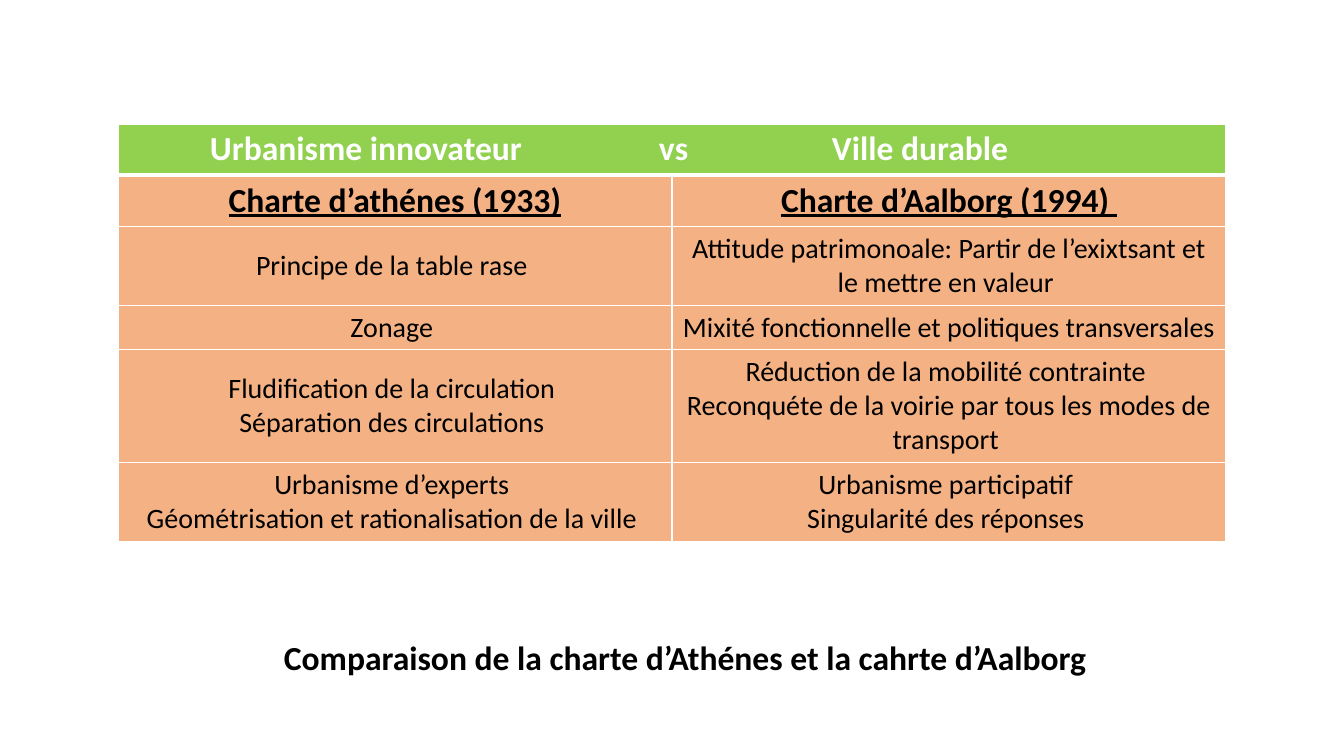
import dataclasses

import lxml.etree
import pptx
import pptx.dml.color
import pptx.enum.text
import pptx.oxml.ns
import pptx.util

SCALE = 914400 / 100.8
FONT = "Calibri"
COLOR = {"white": "FFFFFF", "black": "000000", "green": "92D050", "peach": "F4B183"}
ALIGN = pptx.enum.text.PP_ALIGN
ANCHOR = pptx.enum.text.MSO_ANCHOR


@dataclasses.dataclass
class Style:
    size: int
    color: str = "black"
    bold: bool = False
    line: bool = False
    align: ALIGN = ALIGN.CENTER
    anchor: ANCHOR = ANCHOR.MIDDLE


@dataclasses.dataclass
class Row:
    height: int
    texts: tuple[str, ...]
    style: Style
    fill: str = "peach"
    rule: int = 1


HEAD = Style(24, "white", bold=True, align=ALIGN.LEFT, anchor=ANCHOR.TOP)
CHARTER = Style(24, bold=True, line=True, anchor=ANCHOR.TOP)
BODY = Style(20)
CAPTION = Style(24, bold=True, align=ALIGN.LEFT, anchor=ANCHOR.TOP)

ROWS = [
    Row(50, ("Urbanisme innovateur\tvs\tVille durable",), HEAD, "green", 3),
    Row(50, ("Charte d’athénes (1933)", "Charte d’Aalborg (1994) "), CHARTER),
    Row(79, ("Principe de la table rase ",
             "Attitude patrimonoale: Partir de l’exixtsant et le mettre en valeur "), BODY),
    Row(44, ("Zonage ", "Mixité fonctionnelle et politiques transversales "), BODY),
    Row(113, ("Fludification de la circulation \nSéparation des circulations ",
              "Réduction de la mobilité contrainte \n"
              "Reconquéte de la voirie par tous les modes de transport "), BODY),
    Row(79, ("Urbanisme d’experts \nGéométrisation et rationalisation de la ville ",
             "Urbanisme participatif \nSingularité des réponses "), BODY),
]
LEFT, TOP, COL = 118, 124, 554
INDENT, STOPS = 92, (449, 622)


def px(n: int) -> pptx.util.Emu:
    return pptx.util.Emu(round(n * SCALE))


def rgb(name: str) -> pptx.dml.color.RGBColor:
    return pptx.dml.color.RGBColor.from_string(COLOR[name])


def write(frame, text: str, style: Style) -> None:
    frame.text = text
    frame.word_wrap = True
    for para in frame.paragraphs:
        para.alignment = style.align
        for run in para.runs:
            font = run.font
            font.name, font.size = FONT, pptx.util.Pt(style.size)
            font.bold, font.underline = style.bold, style.line
            font.color.rgb = rgb(style.color)


def add(parent, tag: str, **attrs: str):
    return lxml.etree.SubElement(parent, pptx.oxml.ns.qn(tag), **attrs)


def edge(cell, top: int, base: int) -> None:
    """Give the cell white borders, with top and base widths in points."""
    props = cell._tc.get_or_add_tcPr()
    for side, width in (("L", 1), ("R", 1), ("T", top), ("B", base)):
        line = add(props, f"a:ln{side}", w=str(pptx.util.Pt(width)))
        add(add(line, "a:solidFill"), "a:srgbClr", val=COLOR["white"])


def tabs(para) -> None:
    stops = add(para._p.get_or_add_pPr(), "a:tabLst")
    for stop in STOPS:
        add(stops, "a:tab", pos=str(px(stop)), algn="l")


def grid(slide) -> None:
    high = sum(row.height for row in ROWS)
    table = slide.shapes.add_table(
        len(ROWS), 2, px(LEFT), px(TOP), px(2 * COL), px(high)).table
    table.first_row = table.horz_banding = False
    for col in table.columns:
        col.width = px(COL)
    top = 1
    for r, row in enumerate(ROWS):
        table.rows[r].height = px(row.height)
        for c in range(2):
            cell = table.cell(r, c)
            edge(cell, top, row.rule)
            cell.fill.solid()
            cell.fill.fore_color.rgb = rgb(row.fill)
            cell.vertical_anchor = row.style.anchor
        for c, text in enumerate(row.texts):
            write(table.cell(r, c).text_frame, text, row.style)
        top = row.rule
    head = table.cell(0, 0)
    head.merge(table.cell(0, 1))
    head.margin_left = px(INDENT)
    tabs(head.text_frame.paragraphs[0])


def main() -> None:
    deck = pptx.Presentation()
    deck.slide_width, deck.slide_height = px(1344), px(756)
    slide = deck.slides.add_slide(deck.slide_layouts[6])
    grid(slide)
    box = slide.shapes.add_textbox(px(274), px(632), px(881), px(50))
    write(box.text_frame, "Comparaison de la charte d’Athénes et la cahrte d’Aalborg", CAPTION)
    deck.save("out.pptx")


if __name__ == "__main__":
    main()
